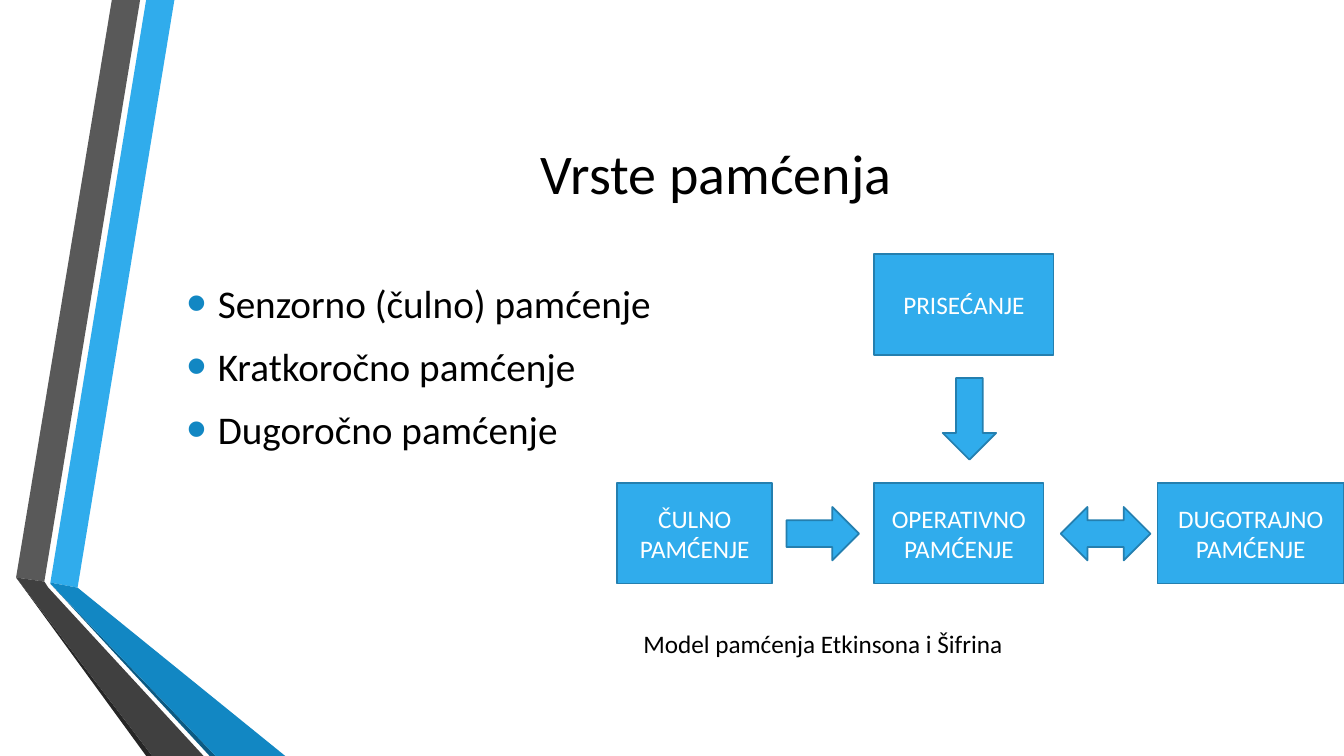
import dataclasses
import typing

import lxml.etree
import pptx
import pptx.dml.color
import pptx.enum.shapes
import pptx.enum.text
import pptx.oxml.ns
import pptx.util

Inches = pptx.util.Inches
Pt = pptx.util.Pt
MSO_SHAPE = pptx.enum.shapes.MSO_SHAPE
PP_ALIGN = pptx.enum.text.PP_ALIGN
qn = pptx.oxml.ns.qn


@dataclasses.dataclass(frozen=True)
class Theme:
    font: str = "Calibri"
    ink: str = "000000"
    paper: str = "FFFFFF"
    accent: str = "30ACEC"
    outline: str = "247FAF"
    bullet: str = "1287C3"
    title: int = 40
    body: int = 28
    label: int = 18
    line: float = 1.25


THEME = Theme()


class Band(typing.NamedTuple):
    color: str
    points: list[tuple[float, float]]


class Block(typing.NamedTuple):
    kind: MSO_SHAPE
    left: float
    top: float
    width: float
    height: float
    text: str = ""


BANDS = [
    Band("30ACEC", [(0.5, 5.78), (0.77, 5.83), (1.73, 0), (1.45, 0)]),
    Band("595959", [(1.39, 0), (1.11, 0), (0.16, 5.73), (0.44, 5.77)]),
    Band("262626", [(0.16, 5.73), (1.45, 7.5), (1.51, 7.5)]),
    Band("0C5A82", [(0.5, 5.79), (2.08, 7.5), (2.14, 7.5)]),
    Band("1287C3", [(0.5, 5.78), (0.5, 5.79), (2.14, 7.5), (2.83, 7.5), (0.77, 5.83)]),
    Band("404040", [(2.02, 7.5), (0.48, 5.83), (0.44, 5.77), (0.16, 5.73), (1.51, 7.5)]),
]

ROW_TOP, BOX_HEIGHT = 4.79, 1.0
ARROW_TOP, ARROW_SIZE = 5.03, 0.53
BLOCKS = [
    Block(MSO_SHAPE.RECTANGLE, 6.12, ROW_TOP, 1.54, BOX_HEIGHT, "ČULNO PAMĆENJE"),
    Block(MSO_SHAPE.RECTANGLE, 8.67, ROW_TOP, 1.68, BOX_HEIGHT, "OPERATIVNO PAMĆENJE"),
    Block(MSO_SHAPE.RECTANGLE, 11.48, ROW_TOP, 1.85, BOX_HEIGHT, "DUGOTRAJNO PAMĆENJE"),
    Block(MSO_SHAPE.RECTANGLE, 8.67, 2.52, 1.78, BOX_HEIGHT, "PRISEĆANJE"),
    Block(MSO_SHAPE.RIGHT_ARROW, 7.8, ARROW_TOP, 0.72, ARROW_SIZE),
    Block(MSO_SHAPE.LEFT_RIGHT_ARROW, 10.52, ARROW_TOP, 0.89, ARROW_SIZE),
    Block(MSO_SHAPE.DOWN_ARROW, 9.35, 3.75, ARROW_SIZE, 0.81),
]
MEMORY_TYPES = ["Senzorno (čulno) pamćenje", "Kratkoročno pamćenje", "Dugoročno pamćenje"]


def rgb(color: str) -> pptx.dml.color.RGBColor:
    return pptx.dml.color.RGBColor.from_string(color)


def set_bullet(p, char: str) -> None:
    pPr = p._p.get_or_add_pPr()
    indent = Inches(0.31) if char else 0
    pPr.set("marL", str(indent))
    pPr.set("indent", str(-indent))
    if not char:
        lxml.etree.SubElement(pPr, qn("a:buNone"))
        return
    color = lxml.etree.SubElement(pPr, qn("a:buClr"))
    lxml.etree.SubElement(color, qn("a:srgbClr"), val=THEME.bullet)
    lxml.etree.SubElement(pPr, qn("a:buSzPct"), val="145000")
    lxml.etree.SubElement(pPr, qn("a:buFont"), typeface="Arial")
    lxml.etree.SubElement(pPr, qn("a:buChar"), char=char)


def write(sp, *lines: str, size: int, color: str = THEME.ink,
          align: PP_ALIGN = PP_ALIGN.LEFT, after: float = 0,
          bullet: str = "") -> None:
    tf = sp.text_frame
    tf.word_wrap = True
    tf.auto_size = pptx.enum.text.MSO_AUTO_SIZE.NONE
    tf.vertical_anchor = pptx.enum.text.MSO_ANCHOR.MIDDLE
    for i, line in enumerate(lines):
        p = tf.add_paragraph() if i else tf.paragraphs[0]
        p.alignment = align
        p.space_before = Pt(size * 0.2 if bullet else 0)
        p.space_after = Pt(after)
        set_bullet(p, bullet)
        r = p.add_run()
        r.text = line
        r.font.name = THEME.font
        r.font.size = Pt(size)
        r.font.color.rgb = rgb(color)


def place(sp, left: float, top: float, width: float, height: float) -> None:
    sp.left, sp.top = Inches(left), Inches(top)
    sp.width, sp.height = Inches(width), Inches(height)


def paint(sp, color: str) -> None:
    sp.shadow.inherit = False
    sp.fill.solid()
    sp.fill.fore_color.rgb = rgb(color)


def draw_band(s, band: Band) -> None:
    start, *rest = [(Inches(x), Inches(y)) for x, y in band.points]
    builder = s.shapes.build_freeform(*start)
    builder.add_line_segments(rest, close=True)
    sp = builder.convert_to_shape()
    paint(sp, band.color)
    sp.line.fill.background()


def draw_block(s, block: Block) -> None:
    box = (Inches(v) for v in (block.left, block.top, block.width, block.height))
    sp = s.shapes.add_shape(block.kind, *box)
    paint(sp, THEME.accent)
    sp.line.color.rgb = rgb(THEME.outline)
    sp.line.width = Pt(THEME.line)
    if block.text:
        write(sp, block.text, size=THEME.label, color=THEME.paper, align=PP_ALIGN.CENTER)


def main() -> None:
    prs = pptx.Presentation()
    prs.slide_width, prs.slide_height = Inches(13.33), Inches(7.5)
    s = prs.slides.add_slide(prs.slide_layouts.get_by_name("Two Content"))
    title, types, caption = list(s.placeholders)[:3]
    for sp in list(s.placeholders)[3:]:
        sp.element.getparent().remove(sp.element)

    for band in BANDS:
        draw_band(s, band)

    place(title, 1.62, 0.75, 10.96, 1.92)
    write(title, "Vrste pamćenja", size=THEME.title, align=PP_ALIGN.CENTER)
    place(types, 1.75, 1.01, 5.35, 5.24)
    write(types, *MEMORY_TYPES, size=THEME.body, after=6, bullet="•")
    place(caption, 6.28, 6.13, 6.13, 0.5)
    write(caption, "Model pamćenja Etkinsona i Šifrina", size=THEME.label)

    for block in BLOCKS:
        draw_block(s, block)

    prs.save("out.pptx")


if __name__ == "__main__":
    main()
